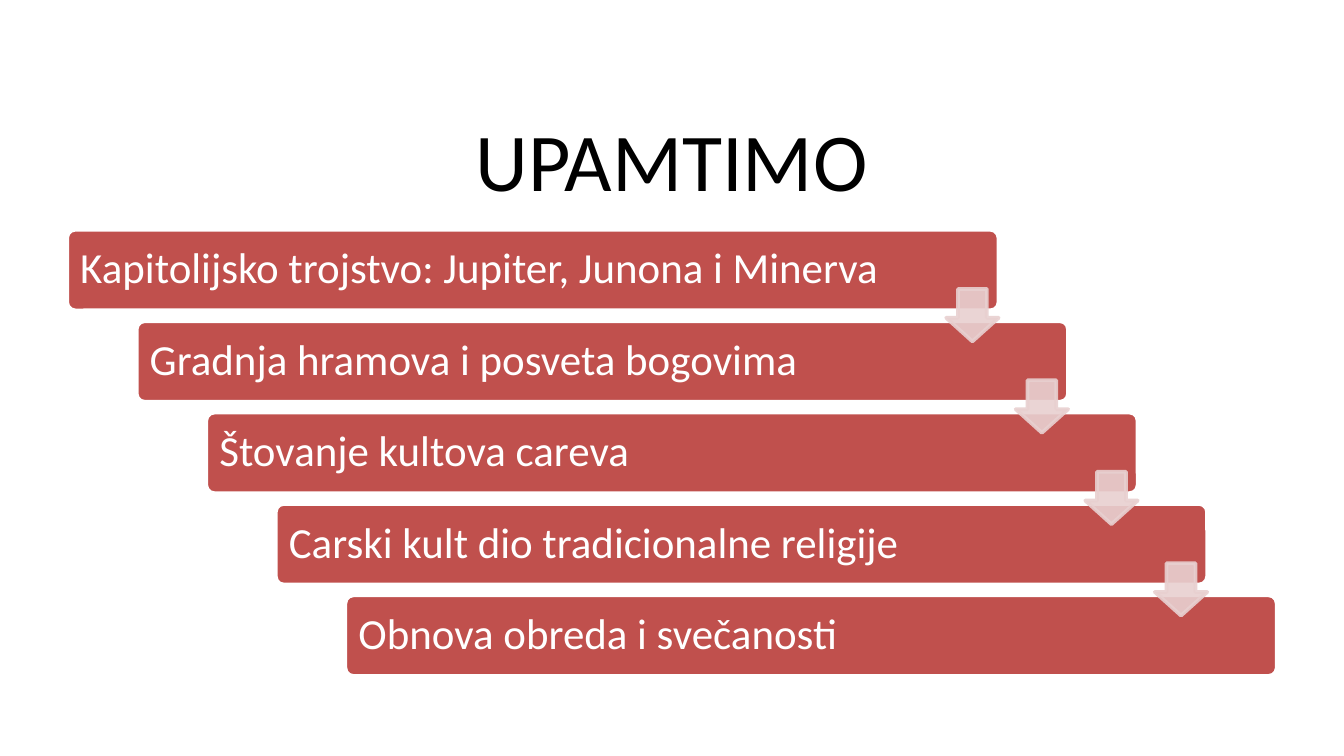
"""Build the UPAMTIMO slide: a staircase of five points linked by arrows."""
from lxml.etree import SubElement
from pptx import Presentation
from pptx.dml.color import RGBColor
from pptx.enum.shapes import MSO_SHAPE
from pptx.enum.text import MSO_ANCHOR, PP_ALIGN
from pptx.oxml.ns import qn
from pptx.util import Inches, Pt

TITLE = "UPAMTIMO"
POINTS = [
    "Kapitolijsko trojstvo: Jupiter, Junona i Minerva",
    "Gradnja hramova i posveta bogovima",
    "Štovanje kultova careva",
    "Carski kult dio tradicionalne religije",
    "Obnova obreda i svečanosti",
]
THEME = {
    "font": "Calibri", "title_size": 44, "point_size": 23, "line_width": 2,
    "title": "000000", "text": "FFFFFF", "bar": "C0504D", "bar_line": "FFFFFF",
    "arrow": "E8D0D0", "arrow_alpha": 90,
}
LEFT, TOP, WIDTH = 0.5, 1.71, 9
BAR_W, BAR_H = 6.93, 0.6
STEP_X, STEP_Y = (WIDTH - BAR_W) / (len(POINTS) - 1), 0.68
ARROW_LEFT, ARROW_TOP, ARROW = 7.04, 2.15, 0.39


def write(shape, text, size, color, align):
    tf = shape.text_frame
    tf.word_wrap = True
    tf.vertical_anchor = MSO_ANCHOR.MIDDLE
    p = tf.paragraphs[0]
    p.alignment = align
    p.line_spacing = 0.9
    r = p.add_run()
    r.text = text
    r.font.name = THEME["font"]
    r.font.size = Pt(size)
    r.font.color.rgb = RGBColor.from_string(color)
    return tf


def add_shape(s, kind, box, adjustments, fill, line):
    sp = s.shapes.add_shape(kind, *map(Inches, box))
    sp.shadow.inherit = False
    for i, value in enumerate(adjustments):
        sp.adjustments[i] = value
    sp.fill.solid()
    sp.fill.fore_color.rgb = RGBColor.from_string(fill)
    sp.line.color.rgb = RGBColor.from_string(line)
    sp.line.width = Pt(THEME["line_width"])
    return sp


def add_bar(s, i, text):
    box = (LEFT + i * STEP_X, TOP + i * STEP_Y, BAR_W, BAR_H)
    sp = add_shape(s, MSO_SHAPE.ROUNDED_RECTANGLE, box, [0.1],
                   THEME["bar"], THEME["bar_line"])
    tf = write(sp, text, THEME["point_size"], THEME["text"], PP_ALIGN.LEFT)
    tf.margin_left = tf.margin_top = tf.margin_bottom = Inches(0.08)
    tf.margin_right = Inches(0.6)


def add_arrow(s, i):
    box = (ARROW_LEFT + i * STEP_X, ARROW_TOP + i * STEP_Y, ARROW, ARROW)
    sp = add_shape(s, MSO_SHAPE.DOWN_ARROW, box, [0.55, 0.45],
                   THEME["arrow"], THEME["arrow"])
    for color in sp._element.spPr.iter(qn("a:srgbClr")):
        SubElement(color, qn("a:alpha"), val=str(THEME["arrow_alpha"] * 1000))


def main():
    prs = Presentation()
    prs.slide_width = Inches(10)
    prs.slide_height = prs.slide_width * 9 // 16
    s = prs.slides.add_slide(prs.slide_layouts[6])
    title = s.shapes.add_textbox(*map(Inches, (LEFT, 0.84, WIDTH, 0.78)))
    write(title, TITLE, THEME["title_size"], THEME["title"], PP_ALIGN.CENTER)
    for i, text in enumerate(POINTS):
        add_bar(s, i, text)
    for i in range(len(POINTS) - 1):
        add_arrow(s, i)
    prs.save("out.pptx")


if __name__ == "__main__":
    main()
